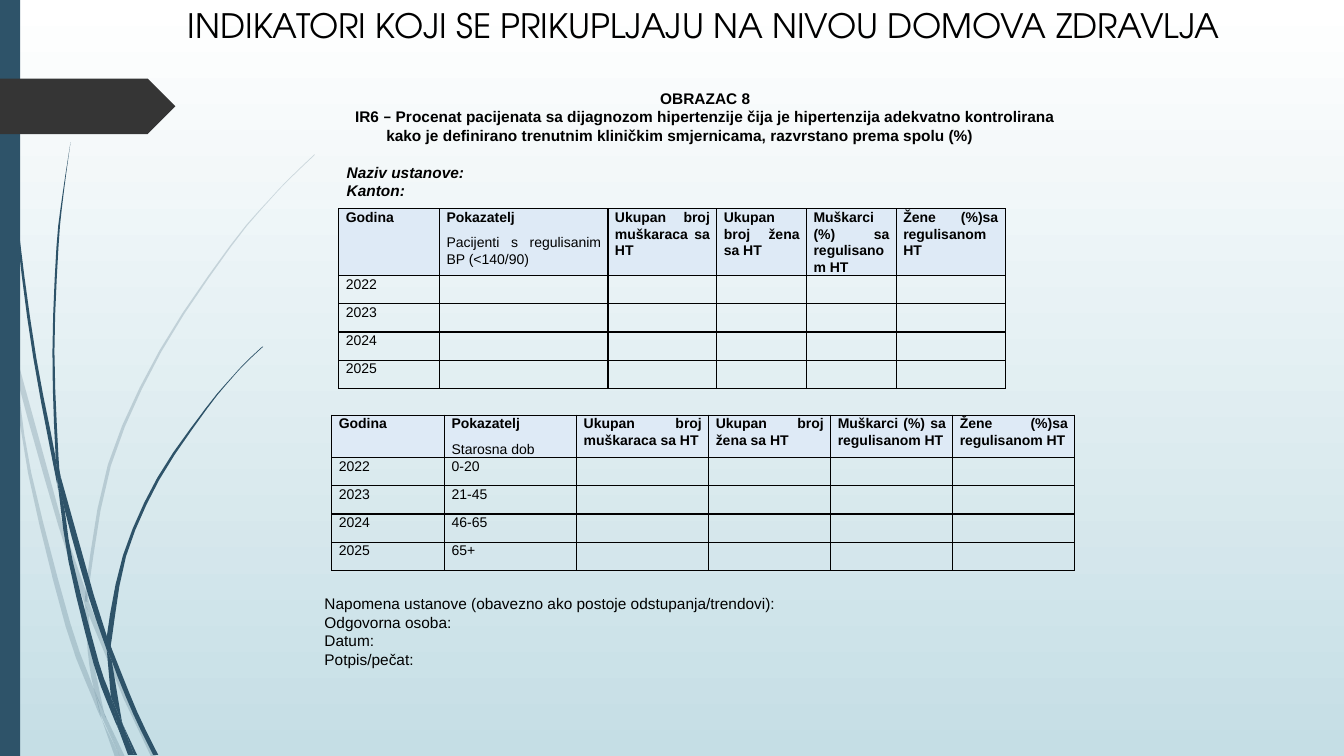
import pptx
import pptx.dml.color
import pptx.enum.shapes
import pptx.enum.text
import pptx.oxml
import pptx.oxml.ns
import pptx.util

Inches = pptx.util.Inches
Pt = pptx.util.Pt
ALIGN = pptx.enum.text.PP_ALIGN
SHAPE = pptx.enum.shapes.MSO_SHAPE
NAVY = "2E5369"


def color(value):
    return pptx.dml.color.RGBColor.from_string(value)


def smooth(points):
    steps = 3 if len(points) > 3 else 1
    padded = [points[0]] + points + [points[-1]]
    curve = []
    for a, b, c, d in zip(padded, padded[1:], padded[2:], padded[3:]):
        for step in range(steps):
            t = step / steps
            curve.append(tuple(
                Inches(b[i] + t * (c[i] - a[i]) / 2
                       + t ** 2 * (2 * a[i] - 5 * b[i] + 4 * c[i] - d[i]) / 2
                       + t ** 3 * (3 * b[i] - a[i] - 3 * c[i] + d[i]) / 2)
                for i in (0, 1)))
    return curve + [tuple(Inches(value) for value in points[-1])]


prs = pptx.Presentation()
prs.slide_width, prs.slide_height = Inches(13.33), Inches(7.5)
slide = prs.slides.add_slide(prs.slide_layouts[6])
backdrop = slide.background.fill
backdrop.gradient()
backdrop.gradient_angle = 270
for stop, (position, shade) in zip(backdrop.gradient_stops, [(0, "FFFFFF"), (1, "C5DEE5")]):
    stop.position = position
    stop.color.rgb = color(shade)

pale_grass = [
    ([(0, 2.82), (0.09, 3.22), (0.11, 3.5)], [(0, 2.99), (0.1, 3.44), (0.11, 3.5)]),
    ([(0.14, 3.45), (0.17, 3.76), (0.58, 5.22), (0.84, 5.99)],
     [(0.14, 3.45), (0.62, 5.2), (0.85, 5.86)]),
    ([(0.88, 5.96), (0.92, 6.07), (1.27, 6.92), (1.55, 7.51)],
     [(0.88, 6.1), (1.23, 6.94), (1.5, 7.51)]),
    ([(1.05, 7.11), (1.19, 7.51)], [(1.05, 7.11), (1.24, 7.51)]),
    ([(0.11, 3.5), (0.17, 3.76), (0.31, 4.69), (0.7, 6.19), (0.93, 6.83), (1.01, 7.14)],
     [(0.11, 3.5), (0.28, 4.7), (0.65, 6.21), (0.92, 6.93), (1.01, 7.14)]),
    ([(0.84, 5.99), (0.87, 6.46), (0.93, 6.83), (1.05, 7.11)],
     [(0.84, 5.99), (0.88, 6.1), (0.91, 6.46), (1.03, 7.06), (1.05, 7.11)]),
    ([(3.12, 1.53), (2.89, 1.75), (2.68, 1.97), (2.28, 2.44), (1.58, 3.48), (1.07, 4.61),
      (0.85, 5.84), (0.88, 5.96)],
     [(3.12, 1.54), (2.9, 1.75), (2.68, 1.98), (2.29, 2.45), (1.6, 3.49), (1.1, 4.62),
      (0.88, 5.84), (0.88, 5.96)]),
    ([(1.01, 7.14), (1.14, 7.51)], [(1.01, 7.14), (1.19, 7.51)]),
    ([(0.85, 5.86), (0.84, 5.99), (0.88, 6.08)], [(0.85, 5.86), (0.88, 5.96), (0.88, 6.1)]),
    ([(0.93, 6.83), (0.99, 7.07), (1.19, 7.51)], [(0.93, 6.83), (1.05, 7.11), (1.19, 7.51)]),
]
dark_grass = [
    ([(0.03, 0), (0.04, 0.48), (0.07, 1.1), (0.17, 2.33), (0.33, 3.55), (0.56, 4.77), (0.57, 4.81)],
     [(0.04, 0), (0.05, 0.48), (0.08, 1.09), (0.19, 2.32), (0.36, 3.55), (0.55, 4.53),
      (0.57, 4.81)]),
    ([(0.6, 4.72), (0.64, 5.05), (0.88, 5.92), (1.06, 6.45)],
     [(0.6, 4.72), (0.93, 5.9), (1.06, 6.31)]),
    ([(1.1, 6.41), (1.13, 6.49), (1.36, 7.06), (1.57, 7.49)],
     [(1.1, 6.41), (1.11, 6.56), (1.32, 7.08), (1.52, 7.49)]),
    ([(0.57, 4.77), (0.64, 5.05), (0.72, 5.56), (0.98, 6.57), (1.1, 6.91), (1.17, 7.22)],
     [(0.57, 4.77), (0.68, 5.57), (0.93, 6.59), (1.11, 7.08), (1.17, 7.22)]),
    ([(0.7, 1.41), (0.62, 1.93), (0.56, 2.45), (0.52, 3.49), (0.55, 4.49), (0.6, 4.72)],
     [(0.7, 1.41), (0.63, 1.93), (0.58, 2.45), (0.54, 3.49), (0.58, 4.53), (0.6, 4.72)]),
    ([(1.22, 7.19), (1.33, 7.49)], [(1.22, 7.19), (1.36, 7.49)]),
    ([(0.55, 4.49), (0.57, 4.77), (0.64, 5.05)], [(0.55, 4.49), (0.6, 4.72), (0.64, 5.05)]),
    ([(2.6, 3.44), (2.45, 3.58), (2.31, 3.73), (2.04, 4.05), (1.56, 4.74), (1.22, 5.51),
      (1.06, 6.31), (1.1, 6.41)],
     [(2.61, 3.44), (2.45, 3.59), (2.31, 3.74), (2.05, 4.06), (1.58, 4.76), (1.25, 5.52),
      (1.11, 6.33), (1.1, 6.41)]),
    ([(1.17, 7.22), (1.27, 7.49)], [(1.17, 7.22), (1.31, 7.49)]),
    ([(1.06, 6.45), (1.1, 6.91), (1.22, 7.19)], [(1.06, 6.45), (1.11, 6.56), (1.21, 7.16)]),
    ([(1.06, 6.31), (1.06, 6.45), (1.11, 6.56)], [(1.06, 6.31), (1.1, 6.41), (1.11, 6.56)]),
    ([(1.1, 6.91), (1.17, 7.22), (1.3, 7.49)], [(1.1, 6.91), (1.22, 7.19), (1.33, 7.49)]),
]
for opacity, blades in [(20, pale_grass), (100, dark_grass)]:
    for left_edge, right_edge in blades:
        outline = smooth(left_edge) + smooth(right_edge)[::-1]
        builder = slide.shapes.build_freeform(*outline[0])
        builder.add_line_segments(outline[1:], close=True)
        blade = builder.convert_to_shape()
        blade.shadow.inherit = False
        blade.line.fill.background()
        blade.fill.solid()
        blade.fill.fore_color.rgb = color(NAVY)
        if opacity < 100:
            tint = blade.fill._xPr.find(".//" + pptx.oxml.ns.qn("a:srgbClr"))
            tint.append(pptx.oxml.parse_xml(
                f'<a:alpha {pptx.oxml.ns.nsdecls("a")} val="{opacity * 1000}"/>'))

for preset, top, width, height, shade in [
        (SHAPE.RECTANGLE, 0, 0.2, 7.5, NAVY), (SHAPE.PENTAGON, 0.78, 1.74, 0.55, "353535")]:
    accent = slide.shapes.add_shape(preset, 0, Inches(top), Inches(width), Inches(height))
    accent.shadow.inherit = False
    accent.line.fill.background()
    accent.fill.solid()
    accent.fill.fore_color.rgb = color(shade)

years = ["2022", "2023", "2024", "2025"]
ages = ["0-20", "21-45", "46-65", "65+"]
totals = ["Ukupan broj muškaraca sa HT", "Ukupan broj žena sa HT",
          "Muškarci (%) sa regulisanom HT", "Žene (%)sa regulisanom HT"]
indicator_tables = [
    (3.36, 2.07, [1, 1.67, 1.08, 0.89, 0.89, 1.08], 0.66,
     "Pacijenti s regulisanim BP (<140/90)", [""] * 4),
    (3.29, 4.12, [1.12, 1.31, 1.31, 1.21, 1.21, 1.21], 0.42, "Starosna dob", ages),
]
for left, top, widths, header_height, indicator, groups in indicator_tables:
    rows = [["Godina", "Pokazatelj\n" + indicator] + totals]
    rows += [[year, group, "", "", "", ""] for year, group in zip(years, groups)]
    heights = [header_height] + [0.28] * len(years)
    table = slide.shapes.add_table(len(rows), len(widths), Inches(left), Inches(top),
                                   Inches(sum(widths)), Inches(sum(heights))).table
    table.first_row = table.horz_banding = False
    for column, width in zip(table.columns, widths):
        column.width = Inches(width)
    for r, (row, height) in enumerate(zip(rows, heights)):
        table.rows[r].height = Inches(height)
        for c, wording in enumerate(row):
            cell = table.cell(r, c)
            cell.margin_left = cell.margin_right = Inches(0.07)
            cell.margin_top = cell.margin_bottom = 0
            cell.text = wording
            for n, paragraph in enumerate(cell.text_frame.paragraphs):
                paragraph.alignment = ALIGN.JUSTIFY
                paragraph.line_spacing = 1.07
                paragraph.space_after = Pt(6)
                paragraph.font.name = "Arial"
                paragraph.font.size = Pt(10)
                paragraph.font.bold = r == 0 and n == 0
                paragraph.font.color.rgb = color("000000")
            if r == 0:
                cell.fill.solid()
                cell.fill.fore_color.rgb = color("DEEAF6")
            else:
                cell.fill.background()
            for n, side in enumerate(["lnL", "lnR", "lnT", "lnB"]):
                border = pptx.oxml.parse_xml(
                    f'<a:{side} {pptx.oxml.ns.nsdecls("a")} w="12700"><a:solidFill>'
                    f'<a:srgbClr val="000000"/></a:solidFill></a:{side}>')
                cell._tc.get_or_add_tcPr().insert(n, border)

definition = [
    ("IR6 ", "Arial"), ("–", "Karla"),
    (" Procenat pacijenata sa dijagnozom hipertenzije čija je hipertenzija adekvatno kontrolirana "
     "kako je definirano trenutnim kliničkim smjernicama, razvrstano prema spolu (%)", "Arial")]
notes = ["Napomena ustanove (obavezno ako postoje odstupanja/trendovi):", "Odgovorna osoba:",
         "Datum:", "Potpis/pečat:"]
text_blocks = [
    (1.28, 0, 11.4, 1.1, 24, 0,
     [([("INDIKATORI KOJI SE PRIKUPLJAJU NA NIVOU DOMOVA ZDRAVLJA", "TeX Gyre Adventor")],
       ALIGN.CENTER, False, False, 0)]),
    (2.62, 5.85, 6.67, 0.84, 11, 0.5,
     [([(note, "Arial")], ALIGN.LEFT, False, False, 0) for note in notes]),
    (2.84, 0.83, 7.81, 1.21, 11, 0.5,
     [([("OBRAZAC 8", "Arial")], ALIGN.CENTER, True, False, 0),
      (definition, ALIGN.CENTER, True, False, 0),
      ([("Naziv ustanove:", "Arial")], ALIGN.LEFT, True, True, 13.3),
      ([("Kanton:", "Arial")], ALIGN.LEFT, True, True, 0)]),
]
for left, top, width, height, size, indent, lines in text_blocks:
    frame = slide.shapes.add_textbox(
        Inches(left), Inches(top), Inches(width), Inches(height)).text_frame
    frame.word_wrap = True
    for n, (pieces, alignment, bold, italic, gap) in enumerate(lines):
        paragraph = frame.add_paragraph() if n else frame.paragraphs[0]
        paragraph.alignment = alignment
        if gap:
            paragraph.space_before = Pt(gap)
        paragraph._p.get_or_add_pPr().set("indent", str(Inches(indent)))
        paragraph.font.name = pieces[0][1]
        paragraph.font.size = Pt(size)
        paragraph.font.bold = bold
        paragraph.font.italic = italic
        paragraph.font.color.rgb = color("000000")
        for wording, typeface in pieces:
            run = paragraph.add_run()
            run.text = wording
            if typeface != pieces[0][1]:
                run.font.name = typeface

prs.save("out.pptx")
